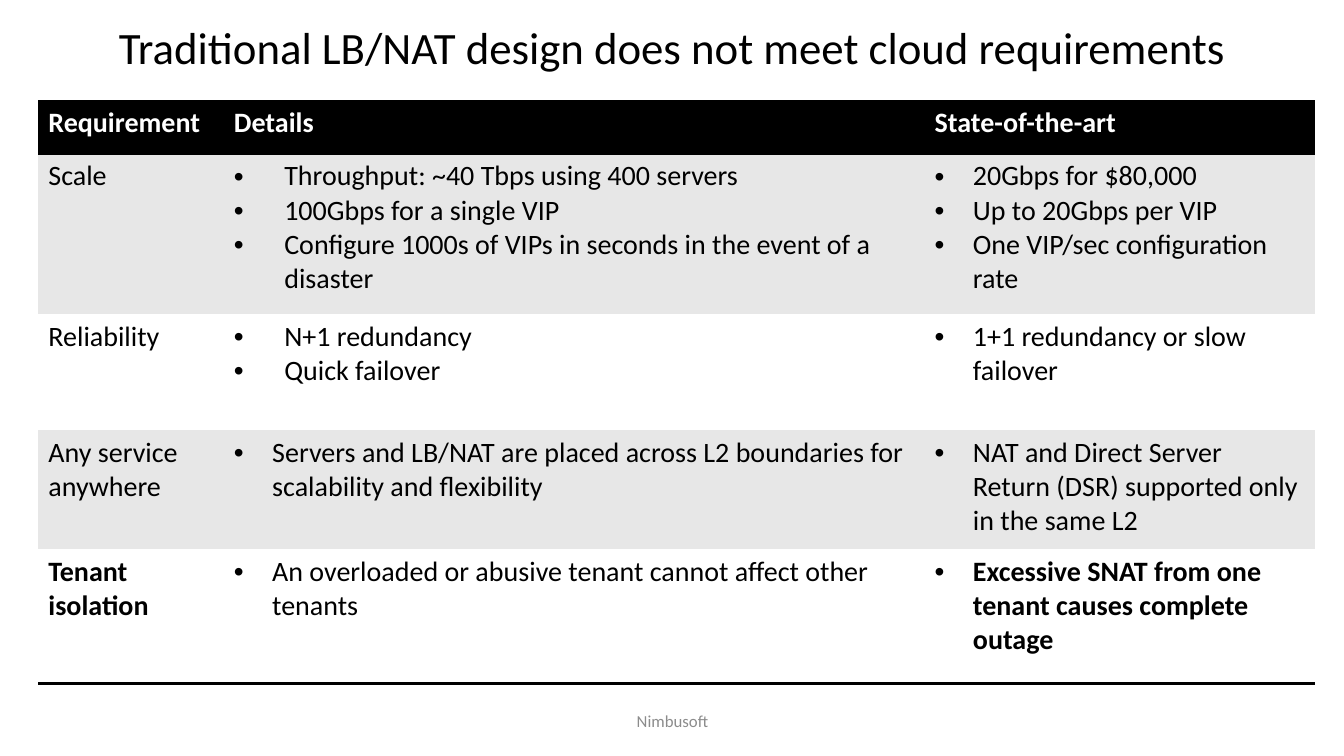
from dataclasses import dataclass
from typing import Any

import lxml.etree
import pptx
import pptx.dml.color
import pptx.enum.text
import pptx.oxml.ns
import pptx.util

PX = 9144  # 100 px to the inch
NO_GRID_STYLE = "{2D5ABB26-0587-4C30-8999-92F81FD0307C}"
CENTER = pptx.enum.text.PP_ALIGN.CENTER


@dataclass(frozen=True)
class Theme:
    font: str = "Calibri"
    ink: str = "000000"
    paper: str = "FFFFFF"
    band: str = "E7E7E7"
    muted: str = "8C8C8C"
    title_size: int = 32
    body_size: int = 20
    footer_size: int = 12
    rule_width: int = 2


THEME = Theme()


@dataclass(frozen=True)
class Caption:
    text: str
    box: tuple[int, int, int, int]
    size: int
    color: str
    line_spacing: float = 1.0


@dataclass(frozen=True)
class Entry:
    lines: tuple[str, ...]
    indent: int = 0  # px; a positive indent makes a bulleted list
    bold: bool = False


@dataclass(frozen=True)
class Row:
    height: int
    entries: tuple[Entry, Entry, Entry]
    fill: str
    color: str = THEME.ink
    rules: tuple[str, ...] = ()


CAPTIONS = (
    Caption("Traditional LB/NAT design does not meet cloud requirements",
            (92, -23, 1150, 145), THEME.title_size, THEME.ink, 0.9),
    Caption("Nimbusoft", (442, 695, 450, 40), THEME.footer_size, THEME.muted),
)

TABLE_LEFT, TABLE_TOP = 38, 100
COLUMN_WIDTHS = (184, 695, 387)
WIDE, NARROW = 50, 38

ROWS = (
    Row(53, (Entry(("Requirement",), bold=True),
             Entry(("Details",), bold=True),
             Entry(("State-of-the-art",), bold=True)),
        THEME.ink, THEME.paper, ("a:lnT", "a:lnB")),
    Row(159, (Entry(("Scale",)),
              Entry(("Throughput: ~40 Tbps using 400 servers",
                     "100Gbps for a single VIP",
                     "Configure 1000s of VIPs in seconds in the event of a disaster"), WIDE),
              Entry(("20Gbps for $80,000",
                     "Up to 20Gbps per VIP",
                     "One VIP/sec configuration rate"), NARROW)),
        THEME.band),
    Row(115, (Entry(("Reliability",)),
              Entry(("N+1 redundancy", "Quick failover"), WIDE),
              Entry(("1+1 redundancy or slow failover",), NARROW)),
        THEME.paper),
    Row(118, (Entry(("Any service anywhere",)),
              Entry(("Servers and LB/NAT are placed across L2 boundaries "
                     "for scalability and flexibility",), NARROW),
              Entry(("NAT and Direct Server Return (DSR) supported only "
                     "in the same L2",), NARROW)),
        THEME.band),
    Row(133, (Entry(("Tenant isolation",), bold=True),
              Entry(("An overloaded or abusive tenant cannot affect other tenants",), NARROW),
              Entry(("Excessive SNAT from one tenant causes complete outage",),
                    NARROW, bold=True)),
        THEME.paper, rules=("a:lnB",)),
)


def px(length: int) -> int:
    return pptx.util.Emu(length * PX)


def rgb(color: str) -> pptx.dml.color.RGBColor:
    return pptx.dml.color.RGBColor.from_string(color)


def apply(target: Any, formats: dict[str, Any]) -> None:
    for name, value in formats.items():
        setattr(target, name, value)


def add_child(parent: Any, tag: str, **attributes: str) -> Any:
    return lxml.etree.SubElement(parent, pptx.oxml.ns.qn(tag), attributes)


def write(paragraph: Any, text: str, size: int, color: str, bold: bool = False) -> None:
    run = paragraph.add_run()
    run.text = text
    apply(run.font, {"name": THEME.font, "size": pptx.util.Pt(size), "bold": bold})
    run.font.color.rgb = rgb(color)


def add_bullet(paragraph: Any, indent: int) -> None:
    properties = paragraph._p.get_or_add_pPr()
    properties.set("marL", str(px(indent)))
    properties.set("indent", str(px(-indent)))
    add_child(properties, "a:buFont", typeface="Arial")
    add_child(properties, "a:buChar", char="•")


def add_rule(cell: Any, side: str) -> None:
    line = add_child(cell._tc.get_or_add_tcPr(), side, w=str(pptx.util.Pt(THEME.rule_width)))
    add_child(add_child(line, "a:solidFill"), "a:srgbClr", val=THEME.ink)


def add_caption(slide: Any, caption: Caption) -> None:
    frame = slide.shapes.add_textbox(*map(px, caption.box)).text_frame
    apply(frame, {"word_wrap": True,
                  "vertical_anchor": pptx.enum.text.MSO_ANCHOR.MIDDLE})
    paragraph = frame.paragraphs[0]
    apply(paragraph, {"alignment": CENTER, "line_spacing": caption.line_spacing})
    write(paragraph, caption.text, caption.size, caption.color)


def fill_cell(cell: Any, entry: Entry, row: Row) -> None:
    # Borders come before the fill in the cell properties
    for side in row.rules:
        add_rule(cell, side)
    cell.fill.solid()
    cell.fill.fore_color.rgb = rgb(row.fill)
    frame = cell.text_frame
    for number, line in enumerate(entry.lines):
        paragraph = frame.add_paragraph() if number else frame.paragraphs[0]
        if entry.indent:
            add_bullet(paragraph, entry.indent)
        write(paragraph, line, THEME.body_size, row.color, entry.bold)


def add_requirements(slide: Any) -> None:
    frame = slide.shapes.add_table(
        len(ROWS), len(COLUMN_WIDTHS), px(TABLE_LEFT), px(TABLE_TOP),
        px(sum(COLUMN_WIDTHS)), px(sum(row.height for row in ROWS)))
    table = frame.table
    table.horz_banding = False
    table._tbl.tblPr.find(pptx.oxml.ns.qn("a:tableStyleId")).text = NO_GRID_STYLE
    for column, width in zip(table.columns, COLUMN_WIDTHS):
        column.width = px(width)
    for table_row, row in zip(table.rows, ROWS):
        table_row.height = px(row.height)
        for cell, entry in zip(table_row.cells, row.entries):
            fill_cell(cell, entry, row)


def main() -> None:
    deck = pptx.Presentation()
    apply(deck, {"slide_width": px(1333), "slide_height": px(750)})
    slide = deck.slides.add_slide(deck.slide_layouts[6])

    # Title and footer
    for caption in CAPTIONS:
        add_caption(slide, caption)

    # Requirements table
    add_requirements(slide)

    deck.save("out.pptx")


if __name__ == "__main__":
    main()
